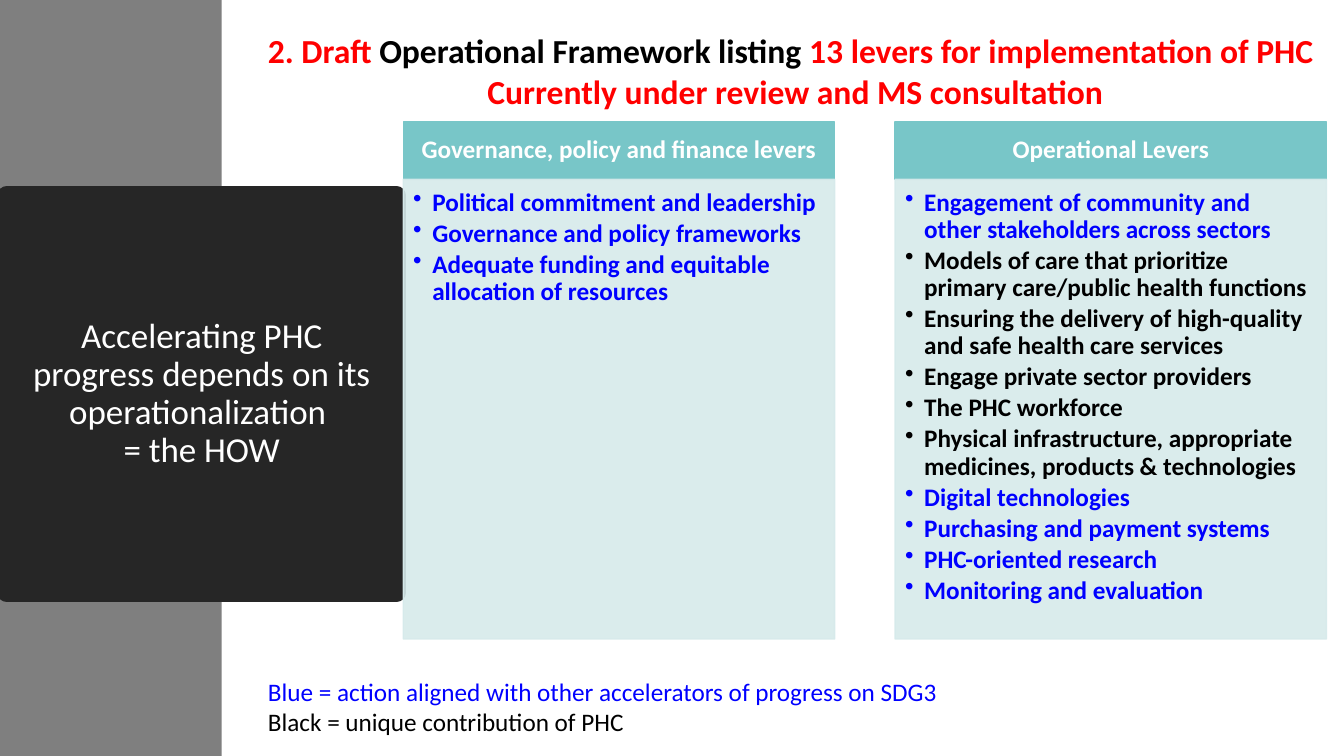
from dataclasses import dataclass

from lxml import etree
from pptx import Presentation
from pptx.dml.color import RGBColor
from pptx.enum.shapes import MSO_SHAPE
from pptx.enum.text import MSO_ANCHOR, MSO_AUTO_SIZE, PP_ALIGN
from pptx.oxml.ns import qn
from pptx.util import Inches, Pt

RECTANGLE = MSO_SHAPE.RECTANGLE
LEFT, CENTER = PP_ALIGN.LEFT, PP_ALIGN.CENTER
TOP, MIDDLE = MSO_ANCHOR.TOP, MSO_ANCHOR.MIDDLE
FIXED = MSO_AUTO_SIZE.NONE

WIDTH, HEIGHT = Inches(13.333), Inches(7.5)
TITLE_ONLY = 5
FONT = "Calibri"
COLORS = {
    "bar": "7F7F7F",
    "title": "262626",
    "header": "78C6C8",
    "body": "D6EAEB",
    "white": "FFFFFF",
    "black": "000000",
    "blue": "0000FF",
    "red": "FF0000",
}


@dataclass(frozen=True)
class Area:
    """Percentages of the slide's width and height."""

    left: float
    top: float
    width: float
    height: float

    def lengths(self) -> tuple[int, int, int, int]:
        return (
            int(WIDTH * self.left / 100),
            int(HEIGHT * self.top / 100),
            int(WIDTH * self.width / 100),
            int(HEIGHT * self.height / 100),
        )


@dataclass(frozen=True)
class Span:
    text: str
    color: str


@dataclass(frozen=True)
class Panel:
    header: str
    levers: tuple[Span, ...]


BAR = Area(0, 0, 16.5, 100)
TITLE = Area(0.53, 25.87, 28.95, 52.53)
HEADING = Area(19.2, 3.33, 79.95, 12.13)
LEGEND = Area(19.2, 88.8, 76.5, 9.47)
PANEL_LEFT, PANEL_STEP, PANEL_WIDTH = 30, 36.6, 32.1
HEADER_TOP, HEADER_HEIGHT, BODY_HEIGHT = 16.13, 7.6, 60.8

PANELS = (
    Panel("Governance, policy and finance levers", (
        Span("Political commitment and leadership", "blue"),
        Span("Governance and policy frameworks", "blue"),
        Span("Adequate funding and equitable allocation of resources", "blue"),
    )),
    Panel("Operational Levers", (
        Span("Engagement of community and other stakeholders across sectors", "blue"),
        Span("Models of care that prioritize primary care/public health functions", "black"),
        Span("Ensuring the delivery of high-quality and safe health care services", "black"),
        Span("Engage private sector providers", "black"),
        Span("The PHC workforce", "black"),
        Span("Physical infrastructure, appropriate medicines, products & technologies", "black"),
        Span("Digital technologies", "blue"),
        Span("Purchasing and payment systems", "blue"),
        Span("PHC-oriented research", "blue"),
        Span("Monitoring and evaluation", "blue"),
    )),
)


def rgb(name: str) -> RGBColor:
    return RGBColor.from_string(COLORS[name])


def paint(shape, color: str, line_width: float, opacity: int = 100) -> None:
    shape.fill.solid()
    shape.fill.fore_color.rgb = rgb(color)
    shape.line.color.rgb = rgb(color)
    shape.line.width = Pt(line_width)
    if opacity < 100:
        for tone in shape.element.spPr.iter(qn("a:srgbClr")):
            etree.SubElement(tone, qn("a:alpha"), val=str(opacity * 1000))


def add_block(page, area: Area, color: str, line_width: float = 1, opacity: int = 100):
    block = page.shapes.add_shape(RECTANGLE, *area.lengths())
    block.shadow.inherit = False
    paint(block, color, line_width, opacity)
    return block


def prepare_frame(frame, anchor=TOP, insets=(0.1, 0.05, 0.1, 0.05)) -> None:
    frame.word_wrap = True
    frame.auto_size = FIXED
    frame.vertical_anchor = anchor
    frame.margin_left, frame.margin_top, frame.margin_right, frame.margin_bottom = map(Inches, insets)


def add_bullet(para) -> None:
    properties = para._p.get_or_add_pPr()
    properties.set("marL", str(Inches(0.19)))
    properties.set("indent", str(-Inches(0.19)))
    etree.SubElement(properties, qn("a:buChar"), char="•")


def write(frame, *spans: Span, size: float, bold: bool = False, align=LEFT,
          spacing: float = 1, after: float = 0, bullet: bool = False) -> None:
    para = frame.paragraphs[0]
    if para.runs:
        para = frame.add_paragraph()
    para.alignment = align
    para.line_spacing = spacing
    para.space_before, para.space_after = Pt(0), Pt(after)
    if bullet:
        add_bullet(para)
    for part, span in enumerate(spans):
        for row, words in enumerate(span.text.split("\n")):
            if row:
                para.add_line_break()
            run = para.add_run()
            run.text = words
            run.font.name = FONT
            run.font.size = Pt(size)
            run.font.bold = bold
            run.font.color.rgb = rgb(span.color)


def add_text_box(page, area: Area):
    box = page.shapes.add_textbox(*area.lengths())
    prepare_frame(box.text_frame)
    return box.text_frame


def place_title(page) -> None:
    title = page.shapes.title
    title.left, title.top, title.width, title.height = TITLE.lengths()
    paint(title, "title", 13.75)
    prepare_frame(title.text_frame, MIDDLE, (0.15, 0.05, 0.15, 0.05))
    words = "Accelerating PHC progress depends on its operationalization \n= the HOW"
    write(title.text_frame, Span(words, "white"), size=25, align=CENTER, spacing=0.9)
    bar = add_block(page, BAR, "bar")
    bar.line.fill.background()
    title.element.addprevious(bar.element)


def add_panel(page, panel: Panel, column: int) -> None:
    left = PANEL_LEFT + column * PANEL_STEP
    header = add_block(page, Area(left, HEADER_TOP, PANEL_WIDTH, HEADER_HEIGHT), "header")
    prepare_frame(header.text_frame, MIDDLE, (0.14, 0.08, 0.14, 0.08))
    write(header.text_frame, Span(panel.header, "white"), size=18, bold=True, align=CENTER, spacing=0.9)
    body_area = Area(left, HEADER_TOP + HEADER_HEIGHT, PANEL_WIDTH, BODY_HEIGHT)
    body = add_block(page, body_area, "body", opacity=90)
    prepare_frame(body.text_frame, TOP, (0.1, 0.1, 0.14, 0.16))
    for lever in panel.levers:
        write(body.text_frame, lever, size=18, bold=True, spacing=0.9, after=2.7, bullet=True)


def main() -> None:
    deck = Presentation()
    deck.slide_width, deck.slide_height = WIDTH, HEIGHT
    page = deck.slides.add_slide(deck.slide_layouts[TITLE_ONLY])
    place_title(page)
    for column, panel in enumerate(PANELS):
        add_panel(page, panel, column)
    legend = add_text_box(page, LEGEND)
    write(legend, Span("Blue = action aligned with other accelerators of progress on SDG3", "blue"), size=18)
    write(legend, Span("Black = unique contribution of PHC", "black"), size=18)
    heading = add_text_box(page, HEADING)
    write(
        heading,
        Span("2. Draft", "red"),
        Span(" Operational Framework listing ", "black"),
        Span("13 levers for implementation of PHC", "red"),
        size=24, bold=True,
    )
    write(heading, Span("Currently under review and MS consultation", "red"), size=24, bold=True, align=CENTER)
    deck.save("out.pptx")


if __name__ == "__main__":
    main()
